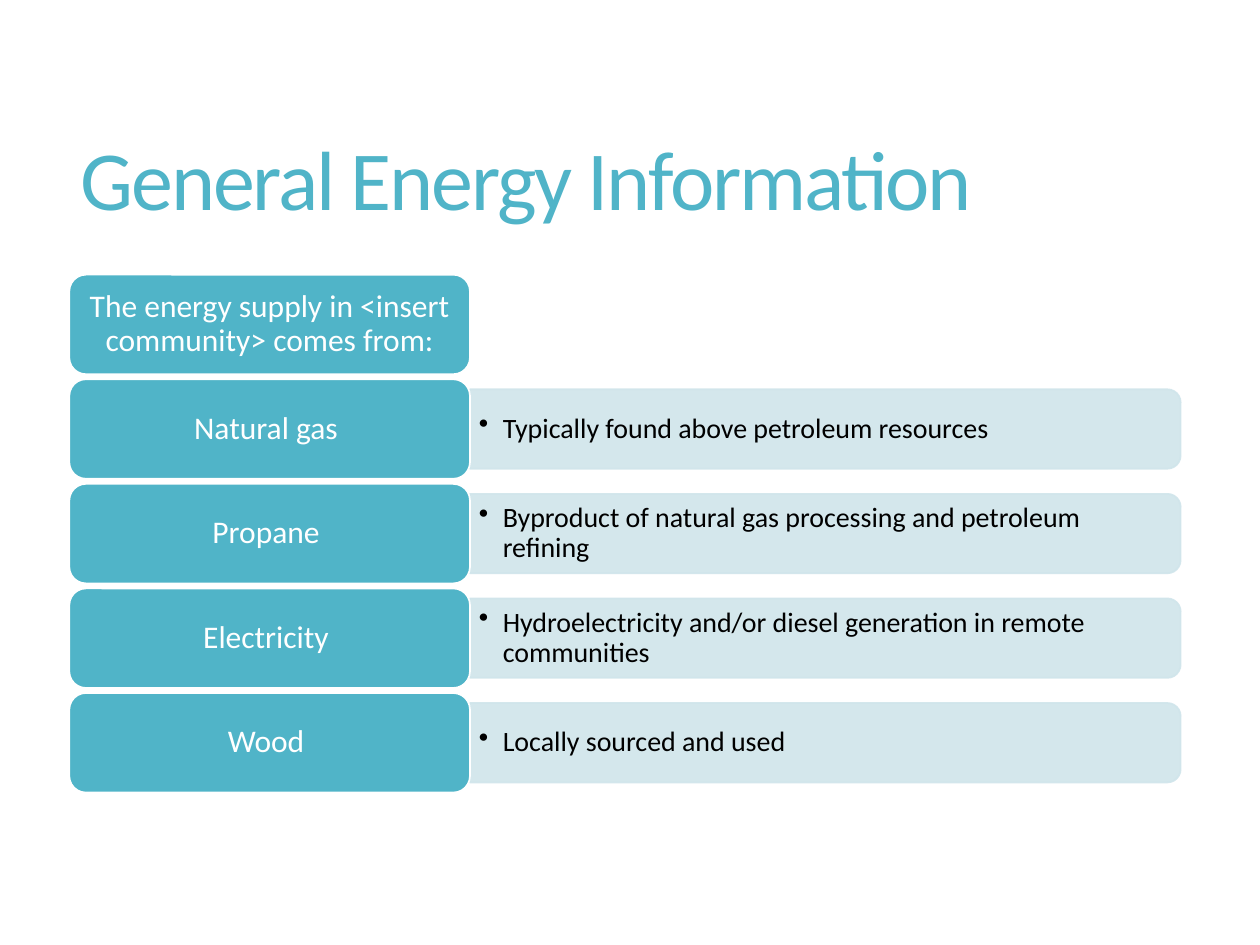
from lxml import etree
from pptx import Presentation
from pptx.dml.color import RGBColor
from pptx.enum.shapes import MSO_SHAPE
from pptx.enum.text import MSO_ANCHOR, MSO_AUTO_SIZE, PP_ALIGN
from pptx.oxml.ns import qn
from pptx.util import Inches, Pt

ROUNDED = MSO_SHAPE.ROUNDED_RECTANGLE
TOP_ROUNDED = MSO_SHAPE.ROUND_2_SAME_RECTANGLE
MIDDLE = MSO_ANCHOR.MIDDLE
LEFT, CENTER = PP_ALIGN.LEFT, PP_ALIGN.CENTER
NO_AUTOFIT = MSO_AUTO_SIZE.NONE
TITLE_ONLY = 5

COLORS = {"teal": "50B4C8", "pale": "D0E5EB", "white": "FFFFFF", "black": "000000"}

HEADING = "The energy supply in <insert community> comes from:"
SOURCES = [
    ("Natural gas ", "Typically found above petroleum resources"),
    ("Propane ", "Byproduct of natural gas processing and petroleum refining"),
    ("Electricity ", "Hydroelectricity and/or diesel generation in remote communities"),
    ("Wood ", "Locally sourced and used"),
]


class EnergySlide:
    """Style, row grid and current slide."""

    font = "Calibri"
    top, row_pitch, row_height = 2.18, 0.83, 0.79
    label_left, label_width = 0.55, 3.18
    panel_left, panel_width, panel_height = 3.73, 5.64, 0.63
    bullet_indent = 0.19

    def __init__(self, presentation):
        self.slide = presentation.slides.add_slide(presentation.slide_layouts[TITLE_ONLY])

    def row_middle(self, row):
        return self.top + row * self.row_pitch + self.row_height / 2

    def set_text(self, frame, text, size, color, align, insets=(0.1, 0.05)):
        """Fill a text frame with one styled run and return the paragraph and run."""
        frame.word_wrap = True
        frame.auto_size = NO_AUTOFIT
        frame.vertical_anchor = MIDDLE
        frame.margin_left = frame.margin_right = Inches(insets[0])
        frame.margin_top = frame.margin_bottom = Inches(insets[1])
        paragraph = frame.paragraphs[0]
        paragraph.alignment = align
        paragraph.line_spacing = 0.9
        run = paragraph.add_run()
        run.text = text
        run.font.name = self.font
        run.font.size = Pt(size)
        run.font.color.rgb = RGBColor.from_string(COLORS[color])
        return paragraph, run

    def block(self, preset, left, top, width, height, fill, line):
        shape = self.slide.shapes.add_shape(
            preset, Inches(left), Inches(top), Inches(width), Inches(height))
        shape.shadow.inherit = False
        shape.fill.solid()
        shape.fill.fore_color.rgb = RGBColor.from_string(COLORS[fill])
        shape.line.color.rgb = RGBColor.from_string(COLORS[line])
        shape.line.width = Pt(1)
        return shape

    def title(self, text):
        title = self.slide.shapes.title
        title.left, title.top = Inches(0.54), Inches(0.55)
        title.width, title.height = Inches(8.84), Inches(1.81)
        _, run = self.set_text(title.text_frame, text, 48, "teal", LEFT)
        run._r.get_or_add_rPr().set("spc", "-120")

    def label(self, row, text):
        shape = self.block(ROUNDED, self.label_left, self.row_middle(row) - self.row_height / 2,
                           self.label_width, self.row_height, "teal", "white")
        self.set_text(shape.text_frame, text, 18, "white", CENTER, (0.07, 0.04))

    def panel(self, row, text):
        """Draw a pale bar, rounded on its right side, with a bulleted text."""
        middle = self.row_middle(row)
        center = self.panel_left + self.panel_width / 2
        bar = self.block(TOP_ROUNDED, center - self.panel_height / 2, middle - self.panel_width / 2,
                         self.panel_height, self.panel_width, "pale", "pale")
        bar.rotation = 90
        for color in bar._element.spPr.iter(qn("a:srgbClr")):
            etree.SubElement(color, qn("a:alpha"), val="90000")

        height = 0.57
        box = self.slide.shapes.add_textbox(
            Inches(self.panel_left), Inches(middle - height / 2), Inches(5.61), Inches(height))
        paragraph, _ = self.set_text(box.text_frame, text, 16, "black", LEFT, (0.07, 0.03))
        properties = paragraph._p.get_or_add_pPr()
        indent = Inches(self.bullet_indent)
        properties.set("marL", str(indent))
        properties.set("indent", str(-indent))
        etree.SubElement(properties, qn("a:buChar"), char="•")


def main():
    presentation = Presentation()
    presentation.slide_width, presentation.slide_height = Inches(10), Inches(7.5)
    page = EnergySlide(presentation)
    page.title("General Energy Information")
    page.label(0, HEADING)
    for row, (source, description) in enumerate(SOURCES, start=1):
        page.panel(row, description)
        page.label(row, source)
    presentation.save("out.pptx")


if __name__ == "__main__":
    main()
